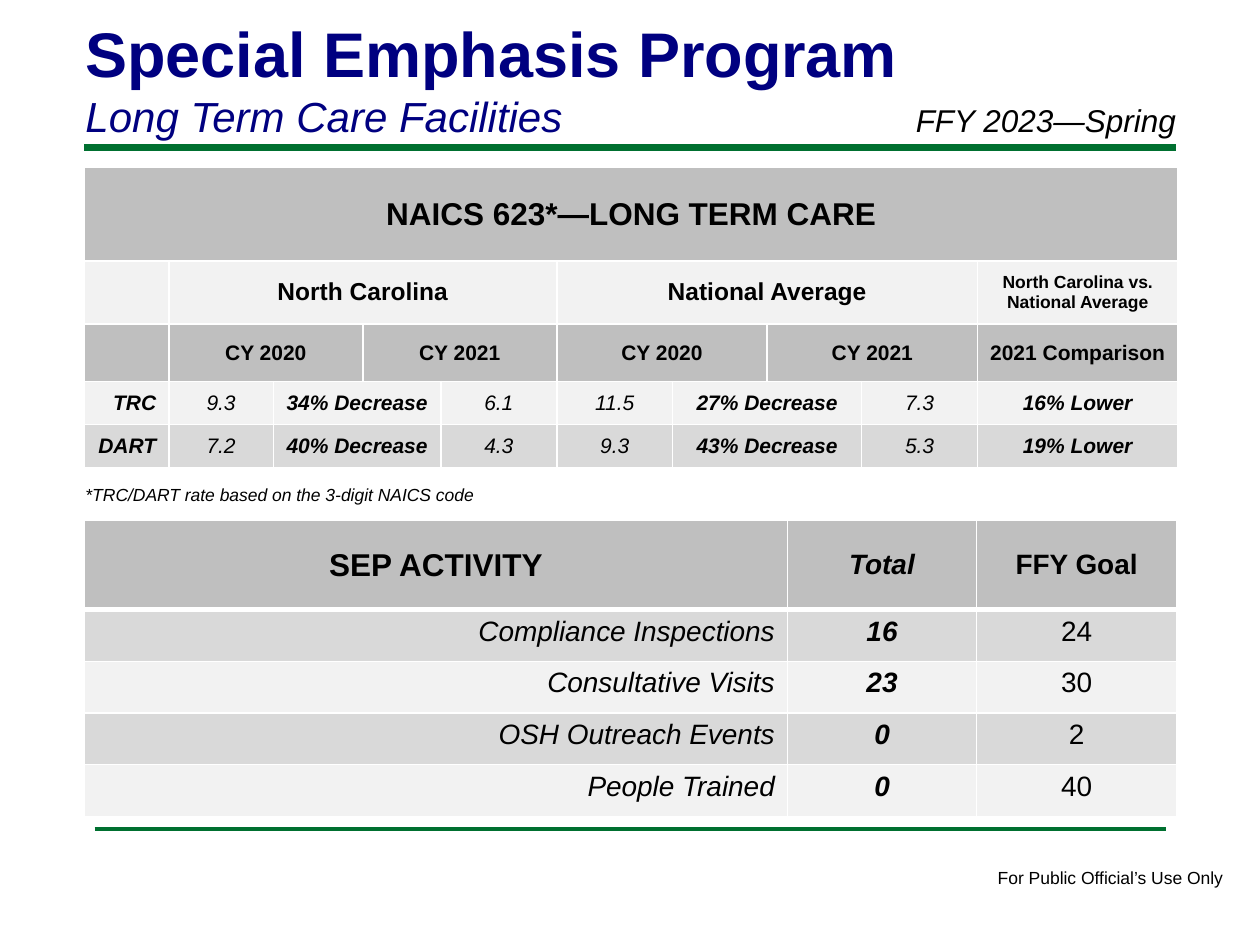
from dataclasses import dataclass

from lxml.etree import SubElement
from pptx import Presentation
from pptx.dml.color import RGBColor
from pptx.enum.shapes import MSO_CONNECTOR
from pptx.enum.text import MSO_ANCHOR, PP_ALIGN
from pptx.oxml.ns import qn
from pptx.util import Inches, Pt


@dataclass(frozen=True)
class Theme:
    font: str = "Arial"
    ink: str = "000000"
    navy: str = "000080"
    green: str = "007030"
    white: str = "FFFFFF"
    header: str = "BFBFBF"
    dark: str = "D9D9D9"
    light: str = "F2F2F2"
    title: int = 36
    subtitle: int = 24
    heading: int = 18
    body: int = 16
    group: int = 14
    label: int = 12
    small: int = 10


@dataclass(frozen=True)
class Span:
    text: str
    size: int
    bold: bool = False
    italic: bool = False
    color: str = Theme.ink


@dataclass(frozen=True)
class Entry:
    span: Span | None
    columns: int = 1
    align: PP_ALIGN = PP_ALIGN.CENTER


@dataclass(frozen=True)
class Row:
    height: float
    fill: str
    entries: list[Entry]
    anchor: MSO_ANCHOR = MSO_ANCHOR.MIDDLE
    top_line: float = 1
    bottom_line: float = 1


THEME = Theme()


def add_span(para, span: Span) -> None:
    run = para.add_run()
    run.text = span.text
    font = run.font
    font.name, font.size = THEME.font, Pt(span.size)
    font.bold, font.italic = span.bold, span.italic
    font.color.rgb = RGBColor.from_string(span.color)


def add_text(page, left: float, top: float, width: float, height: float,
             spans: list[Span], wrap: bool = True,
             anchor: MSO_ANCHOR = MSO_ANCHOR.TOP) -> None:
    """Add a text box with one paragraph for each span."""
    box = page.shapes.add_textbox(Inches(left), Inches(top), Inches(width), Inches(height))
    frame = box.text_frame
    frame.word_wrap = wrap
    frame.vertical_anchor = anchor
    for index, span in enumerate(spans):
        para = frame.add_paragraph() if index else frame.paragraphs[0]
        add_span(para, span)


def add_rule(page, left: float, right: float, top: float, width: float) -> None:
    rule = page.shapes.add_connector(
        MSO_CONNECTOR.STRAIGHT, Inches(left), Inches(top), Inches(right), Inches(top))
    rule.line.color.rgb = RGBColor.from_string(THEME.green)
    rule.line.width = Pt(width)
    SubElement(rule.element.spPr, qn("a:effectLst"))


def style_cell(cell, row: Row) -> None:
    """Give a cell white borders, then its fill, in schema order."""
    properties = cell._tc.get_or_add_tcPr()
    for side, width in (("L", 1), ("R", 1), ("T", row.top_line), ("B", row.bottom_line)):
        border = SubElement(properties, qn(f"a:ln{side}"), w=str(Pt(width)))
        fill = SubElement(border, qn("a:solidFill"))
        SubElement(fill, qn("a:srgbClr"), val=THEME.white)
    cell.fill.solid()
    cell.fill.fore_color.rgb = RGBColor.from_string(row.fill)
    cell.vertical_anchor = row.anchor


def add_grid(page, left: float, top: float, widths: list[float], rows: list[Row]) -> None:
    frame = page.shapes.add_table(
        len(rows), len(widths), Inches(left), Inches(top),
        Inches(sum(widths)), Inches(sum(row.height for row in rows)))
    table = frame.table
    table.first_row = table.horz_banding = False
    for column, width in zip(table.columns, widths):
        column.width = Inches(width)
    for index, row in enumerate(rows):
        table.rows[index].height = Inches(row.height)
        for column in range(len(widths)):
            style_cell(table.cell(index, column), row)
        start = 0
        for entry in row.entries:
            cell = table.cell(index, start)
            if entry.columns > 1:
                cell.merge(table.cell(index, start + entry.columns - 1))
            if entry.span:
                para = cell.text_frame.paragraphs[0]
                para.alignment = entry.align
                add_span(para, entry.span)
            start += entry.columns


def heading(text: str, size: int, columns: int = 1, italic: bool = False) -> Entry:
    return Entry(Span(text, size, bold=True, italic=italic), columns)


def rate_row(fill: str, name: str, rates: list[str], comparison: str) -> Row:
    """Name, then first rate, change and last rate for each region."""
    size = THEME.label
    entries = [Entry(Span(name, size, True, True), align=PP_ALIGN.RIGHT)]
    for index, rate in enumerate(rates):
        is_change = index % 3 == 1
        entries.append(Entry(Span(rate, size, is_change, True), 2 if is_change else 1))
    entries.append(heading(comparison, size, italic=True))
    return Row(0.34, fill, entries)


def rate_rows() -> list[Row]:
    years = [heading(year, THEME.label, 2) for year in ("CY 2020", "CY 2021")]
    return [
        Row(0.74, THEME.header, [heading("NAICS 623*—LONG TERM CARE", THEME.heading, 10)]),
        Row(0.5, THEME.light, [
            Entry(None),
            heading("North Carolina", THEME.group, 4),
            heading("National Average", THEME.group, 4),
            heading("North Carolina vs. National Average", THEME.small)]),
        Row(0.46, THEME.header,
            [Entry(None), *years, *years, heading("2021 Comparison", THEME.label)]),
        rate_row(THEME.light, "TRC",
                 ["9.3", "34% Decrease", "6.1", "11.5", "27% Decrease", "7.3"], "16% Lower"),
        rate_row(THEME.dark, "DART",
                 ["7.2", "40% Decrease", "4.3", "9.3", "43% Decrease", "5.3"], "19% Lower"),
    ]


def activity_rows() -> list[Row]:
    size = THEME.body
    rows = [Row(0.71, THEME.header, [
        heading("SEP ACTIVITY", THEME.heading),
        heading("Total", size, italic=True),
        heading("FFY Goal", size)], bottom_line=3)]
    activities = [("Compliance Inspections", "16", "24"), ("Consultative Visits", "23", "30"),
                  ("OSH Outreach Events", "0", "2"), ("People Trained", "0", "40")]
    for index, (name, total, goal) in enumerate(activities):
        entries = [Entry(Span(name, size, italic=True), align=PP_ALIGN.RIGHT),
                   heading(total, size, italic=True),
                   Entry(Span(goal, size))]
        rows.append(Row(0.41, THEME.light if index % 2 else THEME.dark, entries,
                        MSO_ANCHOR.TOP, top_line=1 if index else 3))
    return rows


def main() -> None:
    deck = Presentation()
    deck.slide_width, deck.slide_height = Inches(10), Inches(7.5)
    page = deck.slides.add_slide(deck.slide_layouts[6])

    add_rule(page, 0.67, 9.33, 1.17, 4)
    add_rule(page, 0.75, 9.25, 6.58, 2)
    add_text(page, 7.82, 6.83, 2.01, 0.27,
             [Span("For Public Official’s Use Only", THEME.small)], wrap=False)
    add_text(page, 0.58, 0.06, 8.25, 1.11, [
        Span("Special Emphasis Program", THEME.title, bold=True, color=THEME.navy),
        Span("Long Term Care Facilities", THEME.subtitle, italic=True, color=THEME.navy),
    ], anchor=MSO_ANCHOR.MIDDLE)
    add_grid(page, 0.67, 4.13, [5.58, 1.5, 1.59], activity_rows())
    add_text(page, 0.58, 3.79, 3.38, 0.27, [
        Span("*TRC/DART rate based on the 3-digit NAICS code", THEME.small, italic=True)],
        wrap=False)
    add_grid(page, 0.67, 1.33,
             [0.67, 0.83, 0.71, 0.62, 0.92, 0.92, 0.75, 0.75, 0.92, 1.59], rate_rows())
    add_text(page, 7.17, 0.75, 2.5, 0.4, [Span("FFY 2023—Spring", THEME.heading, italic=True)])

    deck.save("out.pptx")


if __name__ == "__main__":
    main()
